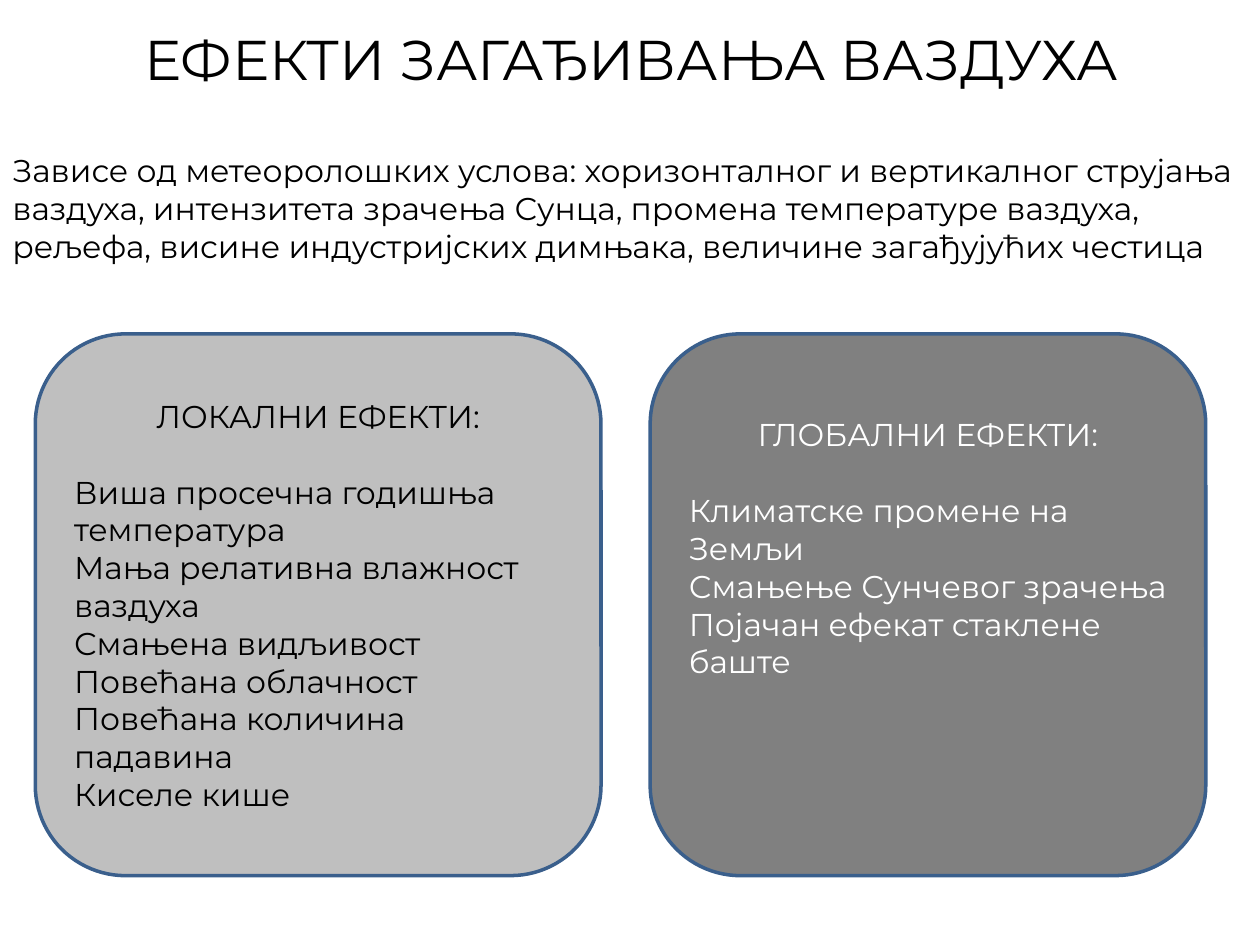
from pptx import Presentation
from pptx import util as u
from pptx.dml.color import RGBColor
from pptx.enum import shapes, text

BLACK = RGBColor(0, 0, 0)
WHITE = RGBColor(255, 255, 255)
LIGHT = RGBColor(0xBF, 0xBF, 0xBF)
DARK = RGBColor(0x80, 0x80, 0x80)
BLUE = RGBColor(0x3A, 0x5F, 0x8C)
LEFT, MID = text.PP_ALIGN.LEFT, text.PP_ALIGN.CENTER
LINE = 21.7  # height of one 18 pt line, in points

deck = Presentation()
deck.slide_width, deck.slide_height = u.Inches(10), u.Inches(7.5)
slide = deck.slides.add_slide(deck.slide_layouts[5])


def style(para, size, color, align):
    para.font.name = "Montserrat"
    para.font.size = u.Pt(size)
    para.font.color.rgb = color
    para.alignment = align


# Title
title = slide.shapes.title
title.left, title.top = u.Inches(0.51), 0
title.width, title.height = u.Inches(9), u.Inches(0.92)
frame = title.text_frame
frame.text = "ЕФЕКТИ ЗАГАЂИВАЊА ВАЗДУХА"
frame.vertical_anchor = text.MSO_ANCHOR.MIDDLE
style(frame.paragraphs[0], 32, BLACK, MID)

# Introduction, as wide as the slide
intro = slide.shapes.add_textbox(0, u.Inches(1.15), deck.slide_width, u.Inches(1.31))
frame = intro.text_frame
frame.word_wrap = True
frame.text = (
    "Зависе од метеоролошких услова: хоризонталног и вертикалног струјања "
    "ваздуха, интензитета зрачења Сунца, промена температуре ваздуха, "
    "рељефа, висине индустријских димњака, величине загађујућих честица"
)
style(frame.paragraphs[0], 18, BLACK, LEFT)

# Two cards: left, width, fill, ink, lines kept free below, heading, effects
cards = [
    (0.28, 4.49, LIGHT, BLACK, 0, "ЛОКАЛНИ ЕФЕКТИ:", [
        "Виша просечна годишња температура",
        "Мања релативна влажност ваздуха",
        "Смањена видљивост",
        "Повећана облачност",
        "Повећана количина падавина",
        "Киселе кише",
    ]),
    (5.16, 4.41, DARK, WHITE, 3, "ГЛОБАЛНИ ЕФЕКТИ:", [
        "Климатске промене на Земљи",
        "Смањење Сунчевог зрачења",
        "Појачан ефекат стаклене баште",
    ]),
]
for left, width, fill, ink, free, head, items in cards:
    card = slide.shapes.add_shape(
        shapes.MSO_SHAPE.ROUNDED_RECTANGLE,
        u.Inches(left), u.Inches(2.65), u.Inches(width), u.Inches(4.3))
    card.shadow.inherit = False
    card.fill.solid()
    card.fill.fore_color.rgb = fill
    card.line.color.rgb = BLUE
    card.line.width = u.Pt(2)
    frame = card.text_frame
    frame.word_wrap = True
    frame.vertical_anchor = text.MSO_ANCHOR.MIDDLE
    frame.margin_bottom = u.Inches(0.05) + u.Pt(free * LINE)
    frame.text = "\n".join([head] + items)
    for para in frame.paragraphs:
        style(para, 18, ink, LEFT)
    frame.paragraphs[0].alignment = MID
    frame.paragraphs[0].space_after = u.Pt(LINE)

deck.save("out.pptx")
